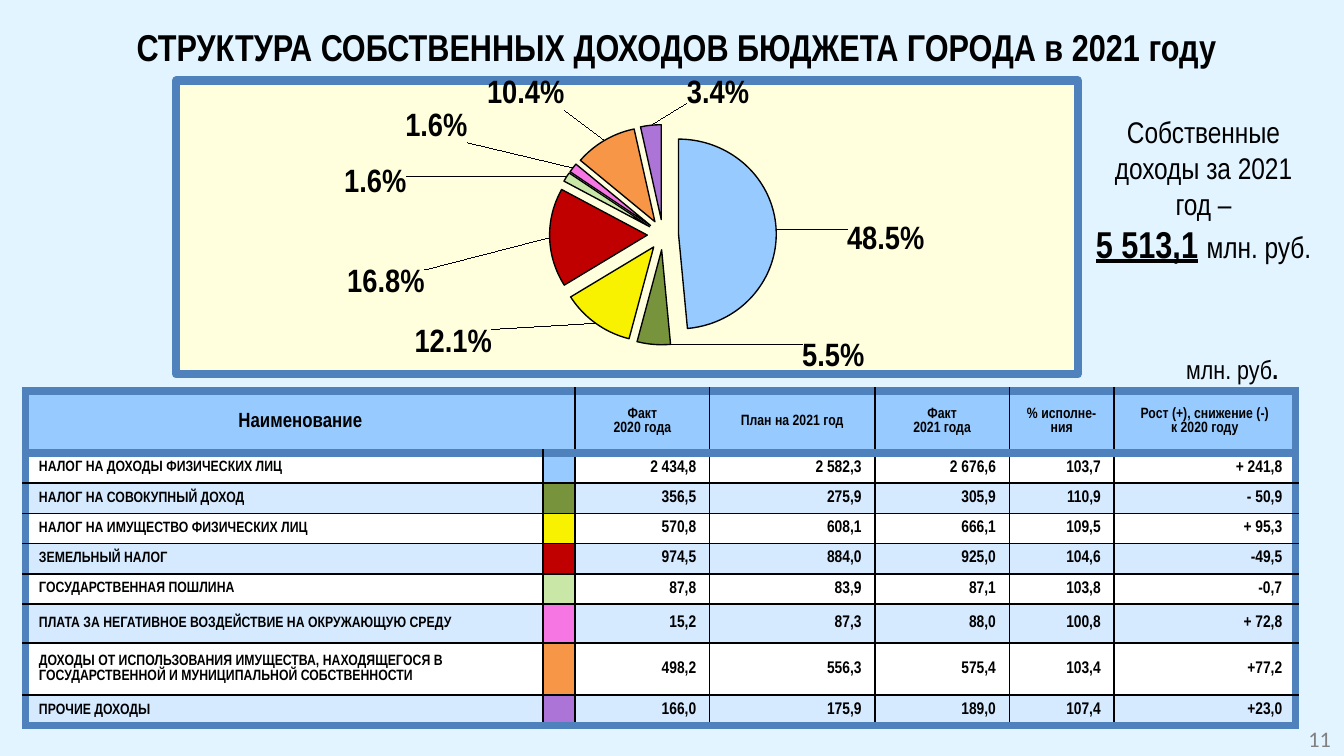
from dataclasses import dataclass

from pptx import Presentation
from pptx import util as u
from pptx.chart.data import CategoryChartData
from pptx.dml.color import RGBColor
from pptx.enum import chart as charts, text
from pptx.oxml import parse_xml
from pptx.oxml.ns import nsdecls


@dataclass(frozen=True)
class Theme:
    font: str = "Arial Narrow"
    number_font: str = "Calibri"
    ink: str = "000000"
    grey: str = "808080"
    page: str = "E1F4FF"
    chart: str = "FFFFDD"
    frame: str = "4F81BD"
    header: str = "97CBFF"
    bands: tuple = ("FFFFFF", "D5EAFF")
    frame_width: float = 4.5
    grid_width: float = 1
    title: float = 20
    label: float = 18
    note: float = 16
    unit: float = 14
    page_number: float = 11.9
    name_head: float = 11
    value: float = 9
    small: float = 8


THEME = Theme()
LEFT, CENTER, RIGHT = text.PP_ALIGN.LEFT, text.PP_ALIGN.CENTER, text.PP_ALIGN.RIGHT

# Content
TITLE = "СТРУКТУРА СОБСТВЕННЫХ ДОХОДОВ БЮДЖЕТА ГОРОДА в 2021 году"
HEADINGS = ["Наименование", "", "Факт\n2020 года", "План на 2021 год",
            "Факт\n2021 года", "% исполне-ния", "Рост (+), снижение (-)\nк 2020 году"]
# name, colour, share, label shift (shares of the chart), table values
INCOMES = [
    ("НАЛОГ НА ДОХОДЫ ФИЗИЧЕСКИХ ЛИЦ", "97CBFF", 48.5, (0.07, 0.04),
     ["2 434,8", "2 582,3", "2 676,6", "103,7", "+ 241,8"]),
    ("НАЛОГ НА СОВОКУПНЫЙ ДОХОД", "77933C", 5.5, (0.2, -0.03),
     ["356,5", "275,9", "305,9", "110,9", "- 50,9"]),
    ("НАЛОГ НА ИМУЩЕСТВО ФИЗИЧЕСКИХ ЛИЦ", "F8F200", 12.1, (-0.11, 0),
     ["570,8", "608,1", "666,1", "109,5", "+ 95,3"]),
    ("ЗЕМЕЛЬНЫЙ НАЛОГ", "C00000", 16.8, (-0.13, 0.16),
     ["974,5", "884,0", "925,0", "104,6", "-49,5"]),
    ("ГОСУДАРСТВЕННАЯ ПОШЛИНА", "C9E7A7", 1.6, (-0.17, 0.09),
     ["87,8", "83,9", "87,1", "103,8", "-0,7"]),
    ("ПЛАТА ЗА НЕГАТИВНОЕ ВОЗДЕЙСТВИЕ НА ОКРУЖАЮЩУЮ СРЕДУ", "F676E4", 1.6, (-0.11, -0.07),
     ["15,2", "87,3", "88,0", "100,8", "+ 72,8"]),
    ("ДОХОДЫ ОТ ИСПОЛЬЗОВАНИЯ ИМУЩЕСТВА, НАХОДЯЩЕГОСЯ В ГОСУДАРСТВЕННОЙ И "
     "МУНИЦИПАЛЬНОЙ СОБСТВЕННОСТИ", "F79646", 10.4, (-0.04, -0.08),
     ["498,2", "556,3", "575,4", "103,4", "+77,2"]),
    ("ПРОЧИЕ ДОХОДЫ", "AC74D6", 3.4, (0.11, -0.05),
     ["166,0", "175,9", "189,0", "107,4", "+23,0"]),
]
COLUMNS = [3.85, 0.24, 1, 1.23, 1, 0.78, 1.35]
LINE_ROW = 0.9 / 4
ROWS = [0.46] + [LINE_ROW] * 5 + [0.29, 0.39, LINE_ROW]


def rgb(value):
    return RGBColor.from_string(value)


def inches(*lengths):
    return [u.Inches(length) for length in lengths]


def set_font(font, size, bold=False, color=THEME.ink, name=THEME.font):
    font.name, font.size, font.bold = name, u.Pt(size), bold
    font.color.rgb = rgb(color)


def add_text(page, box, lines, align, **font):
    """Each line is a list of (text, size, bold, underline) spans."""
    frame = page.shapes.add_textbox(*inches(*box)).text_frame
    frame.word_wrap = True
    for index, line in enumerate(lines):
        para = frame.paragraphs[0] if index == 0 else frame.add_paragraph()
        para.alignment = align
        for words, size, bold, underline in line:
            span = para.add_run()
            span.text = words
            set_font(span.font, size, bold, **font)
            span.font.underline = underline


def set_borders(cell, framed):
    """Draw all four sides; those in framed get the thick frame line."""
    properties = cell._tc.get_or_add_tcPr()
    for index, side in enumerate("LRTB"):
        color, width = ((THEME.frame, THEME.frame_width) if side in framed
                        else (THEME.ink, THEME.grid_width))
        properties.insert(index, parse_xml(
            f'<a:ln{side} {nsdecls("a")} w="{u.Pt(width)}"><a:solidFill>'
            f'<a:srgbClr val="{color}"/></a:solidFill></a:ln{side}>'))


def fill_cell(cell, words, color, size, align, pad):
    cell.text = words
    cell.fill.solid()
    cell.fill.fore_color.rgb = rgb(color)
    cell.vertical_anchor = text.MSO_ANCHOR.MIDDLE
    cell.margin_top = cell.margin_bottom = u.Inches(pad)
    for para in cell.text_frame.paragraphs:
        para.alignment = align
        set_font(para.font, size, True)


def manual_layout(x, y, size=""):
    return (f'<c:layout {nsdecls("c")}><c:manualLayout>{size}'
            f'<c:x val="{x}"/><c:y val="{y}"/>')


def add_income_chart(page):
    data = CategoryChartData()
    data.categories = [str(number + 1) for number in range(len(INCOMES))]
    data.add_series("Series 1", [income[2] for income in INCOMES])
    chart = page.shapes.add_chart(charts.XL_CHART_TYPE.PIE,
                                  *inches(1.28, 0.57, 6.77, 2.27), data).chart
    chart.has_legend = chart.has_title = False
    set_font(chart.font, THEME.label, True)
    plot = chart.plots[0]
    plot.vary_by_categories = True
    series = plot.series[0]
    for index, income in enumerate(INCOMES):
        point = series.points[index].format
        point.fill.solid()
        point.fill.fore_color.rgb = rgb(income[1])
        point.line.color.rgb = rgb(THEME.ink)
        point.line.width = u.Pt(0.75)

    # Exploded slices
    series._element.find("{*}dPt").addprevious(
        parse_xml(f'<c:explosion {nsdecls("c")} val="16"/>'))

    # Shifted percentage labels with leader lines
    flags = "".join(f'<c:show{name} val="{int(name == "Percent")}"/>' for name in
                    ("LegendKey", "Val", "CatName", "SerName", "Percent", "BubbleSize"))
    number = '<c:numFmt formatCode="0.0%" sourceLinked="0"/><c:spPr><a:noFill/></c:spPr>'
    position = '<c:dLblPos val="outEnd"/>'
    labels = "".join(
        f'<c:dLbl><c:idx val="{index}"/>{manual_layout(*income[3])}</c:manualLayout></c:layout>'
        f'{number}{position}{flags}</c:dLbl>' for index, income in enumerate(INCOMES))
    series._element.find("{*}cat").addprevious(parse_xml(
        f'<c:dLbls {nsdecls("c", "a")}>{labels}{number}{position}{flags}'
        '<c:showLeaderLines val="1"/></c:dLbls>'))

    # Plot position, background and frame
    area = chart._chartSpace.chart.plotArea
    for layout in area.findall("{*}layout"):
        area.remove(layout)
    modes = '<c:layoutTarget val="inner"/><c:xMode val="edge"/><c:yMode val="edge"/>'
    area.insert(0, parse_xml(manual_layout(0.08, 0.15, modes)
                             + '<c:w val="0.92"/><c:h val="0.75"/></c:manualLayout></c:layout>'))
    chart._chartSpace.chart.addnext(parse_xml(
        f'<c:spPr {nsdecls("c", "a")}><a:solidFill><a:srgbClr val="{THEME.chart}"/></a:solidFill>'
        f'<a:ln w="{u.Pt(THEME.frame_width)}"><a:solidFill><a:srgbClr val="{THEME.frame}"/>'
        '</a:solidFill></a:ln></c:spPr>'))


def add_income_table(page):
    table = page.shapes.add_table(len(ROWS), len(COLUMNS),
                                  *inches(0.19, 2.91, sum(COLUMNS), sum(ROWS))).table
    for column, width in zip(table.columns, COLUMNS):
        column.width = u.Inches(width)
    for row, height in zip(table.rows, ROWS):
        row.height = u.Inches(height)
    lines = [HEADINGS] + [[name, "", *values] for name, _, _, _, values in INCOMES]
    last_row, last_column = len(ROWS) - 1, len(COLUMNS) - 1
    for r, line in enumerate(lines):
        for c, words in enumerate(line):
            cell = table.cell(r, c)
            color = THEME.header if r == 0 else THEME.bands[(r - 1) % 2]
            if r == 0:
                size = THEME.small if c else THEME.name_head
                fill_cell(cell, words, color, size, CENTER, 0.04)
            elif c < 2:
                color = INCOMES[r - 1][1] if c else color
                fill_cell(cell, words, color, THEME.small, LEFT, 0.01)
            else:
                fill_cell(cell, words, color, THEME.value, RIGHT, 0.04)
            set_borders(cell, "L" * (c == 0) + "R" * (c == last_column)
                        + "T" * (r < 2) + "B" * (r in (0, last_row)))
    table.cell(0, 0).merge(table.cell(0, 1))


def main():
    deck = Presentation()
    deck.slide_width, deck.slide_height = inches(10, 10 * 9 / 16)
    page = deck.slides.add_slide(deck.slide_layouts[5])
    page.background.fill.solid()
    page.background.fill.fore_color.rgb = rgb(THEME.page)

    # Title
    title = page.shapes.title
    title.left, title.top, title.width, title.height = inches(0.2, 0.1, 9.67, 0.43)
    title.text_frame.text = TITLE
    title.text_frame.vertical_anchor = text.MSO_ANCHOR.MIDDLE
    para = title.text_frame.paragraphs[0]
    para.alignment, para.line_spacing = CENTER, 1.2
    set_font(para.font, THEME.title, True)

    add_income_table(page)
    add_income_chart(page)

    # Total, unit and page number
    add_text(page, (8.05, 0.8, 1.81, 1.25), [
        [("Собственные доходы за 2021 год –", THEME.note, False, False)],
        [("5 513,1", THEME.title, True, True), (" ", THEME.title, True, False),
         ("млн. руб.", THEME.note, False, False)]], CENTER)
    add_text(page, (8.15, 2.58, 1.46, 0.34), [
        [("млн. руб", THEME.unit, False, False), (".", THEME.unit, True, False)]], RIGHT)
    add_text(page, (9.44, 5.35, 0.56, 0.26), [[("11", THEME.page_number, False, False)]],
             RIGHT, color=THEME.grey, name=THEME.number_font)
    deck.save("out.pptx")


if __name__ == "__main__":
    main()
